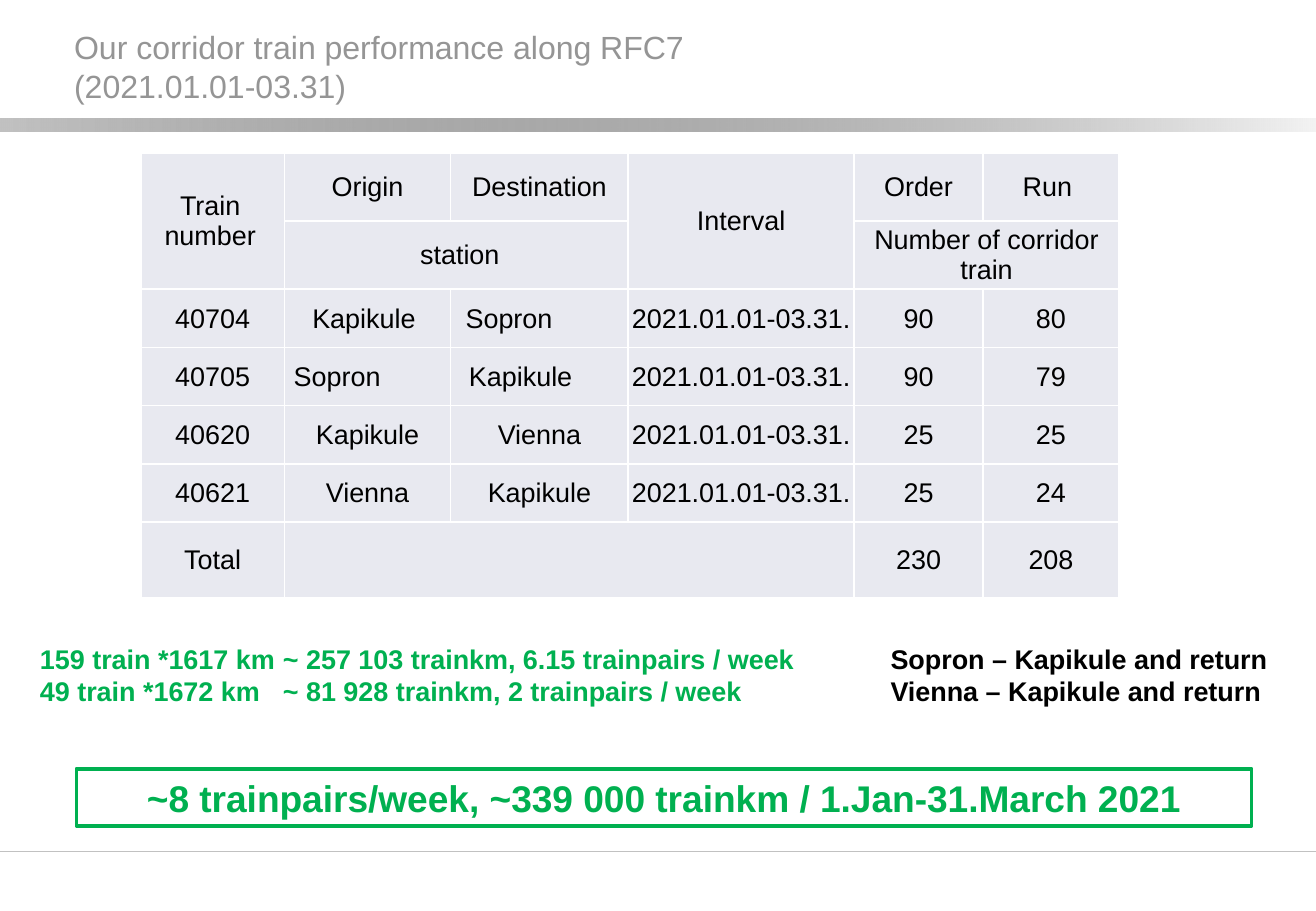
import lxml.etree
import pptx
import pptx.dml.color
import pptx.enum.shapes
import pptx.enum.text
import pptx.oxml
import pptx.oxml.ns
import pptx.util

Inches = pptx.util.Inches
Pt = pptx.util.Pt
qn = pptx.oxml.ns.qn
ALIGN = pptx.enum.text.PP_ALIGN
ANCHOR = pptx.enum.text.MSO_ANCHOR
SHAPE = pptx.enum.shapes.MSO_SHAPE

COLORS = {"black": "000000", "title": "959595", "rule": "C1C1C1",
          "cell": "E8E9F0", "white": "FFFFFF", "green": "00B050"}


class SlideBuilder:
    font = "Arial"

    def __init__(self, slide):
        self.s = slide

    def rgb(self, name):
        return pptx.dml.color.RGBColor.from_string(COLORS[name])

    def style(self, r, size, color, bold=False):
        r.font.name = self.font
        r.font.size = Pt(size)
        r.font.bold = bold
        r.font.color.rgb = self.rgb(color)

    def frame(self, tf, inset, anchor):
        tf.word_wrap = True
        tf.margin_left = tf.margin_right = Inches(inset[0])
        tf.margin_top = tf.margin_bottom = Inches(inset[1])
        tf.vertical_anchor = anchor

    def rect(self, x, y, w, h):
        sp = self.s.shapes.add_shape(SHAPE.RECTANGLE, Inches(x), Inches(y), Inches(w), Inches(h))
        sp.shadow.inherit = False
        return sp

    def gradient_bar(self, x, y, w, h):
        sp = self.rect(x, y, w, h)
        sp.line.fill.background()
        sp.fill.gradient()
        sp.fill.gradient_angle = 0
        for stop, color, position in zip(sp.fill.gradient_stops, ("rule", "black"), (0, 1)):
            stop.color.rgb = self.rgb(color)
            stop.position = position
        end = sp.element.findall(".//" + qn("a:srgbClr"))[-1]
        lxml.etree.SubElement(end, qn("a:alpha"), val="5000")

    def line(self, x1, y1, x2, y2, color, width):
        c = self.s.shapes.add_connector(pptx.enum.shapes.MSO_CONNECTOR.STRAIGHT,
                                        Inches(x1), Inches(y1), Inches(x2), Inches(y2))
        c.line.color.rgb = self.rgb(color)
        c.line.width = Pt(width)
        lxml.etree.SubElement(c.element.spPr, qn("a:effectLst"))

    def title(self, x, y, w, h, text):
        tf = self.s.shapes.add_textbox(Inches(x), Inches(y), Inches(w), Inches(h)).text_frame
        self.frame(tf, (0, 0), ANCHOR.BOTTOM)
        p = tf.paragraphs[0]
        p.text = text
        for r in p.runs:
            self.style(r, 19, "title")

    def tabbed_lines(self, x, y, w, h, lines, tabs):
        tf = self.s.shapes.add_textbox(Inches(x), Inches(y), Inches(w), Inches(h)).text_frame
        self.frame(tf, (0.1, 0.05), ANCHOR.TOP)
        for i, (figures, route) in enumerate(lines):
            p = tf.add_paragraph() if i else tf.paragraphs[0]
            tab_list = lxml.etree.SubElement(p._p.get_or_add_pPr(), qn("a:tabLst"))
            for tab in tabs:
                lxml.etree.SubElement(tab_list, qn("a:tab"), pos=str(Inches(tab)), algn="l")
            for text, color in ((figures + "\t", "green"), (route, "black")):
                r = p.add_run()
                r.text = text
                self.style(r, 16, color, True)

    def outlined_box(self, x, y, w, h, text):
        sp = self.rect(x, y, w, h)
        sp.fill.background()
        sp.line.color.rgb = self.rgb("green")
        sp.line.width = Pt(2.25)
        self.frame(sp.text_frame, (0.1, 0.05), ANCHOR.MIDDLE)
        p = sp.text_frame.paragraphs[0]
        p.text = text
        p.alignment = ALIGN.CENTER
        self.style(p.runs[0], 22, "green", True)

    def border(self, cell):
        tc_pr = cell._tc.get_or_add_tcPr()
        for side in ("L", "R", "T", "B"):
            ln = lxml.etree.SubElement(tc_pr, qn("a:ln" + side), w=str(Pt(1)))
            fill = lxml.etree.SubElement(ln, qn("a:solidFill"))
            lxml.etree.SubElement(fill, qn("a:srgbClr"), val=COLORS["white"])

    def table(self, x, y, cols, rows, data, merges, shifts):
        table = self.s.shapes.add_table(len(rows), len(cols), Inches(x), Inches(y),
                                        Inches(sum(cols)), Inches(sum(rows))).table
        table.first_row = table.horz_banding = False
        for col, width in zip(table.columns, cols):
            col.width = Inches(width)
        for row, height in zip(table.rows, rows):
            row.height = Inches(height)
        for i, values in enumerate(data):
            for j, text in enumerate(values):
                cell = table.cell(i, j)
                self.border(cell)
                cell.fill.solid()
                cell.fill.fore_color.rgb = self.rgb("cell")
                cell.vertical_anchor = ANCHOR.MIDDLE
                shift = shifts.get((i, j), 0)
                cell.margin_left = Inches(0.01 + max(-shift, 0))
                cell.margin_right = Inches(0.01 + max(shift, 0))
                cell.margin_top = Inches(0.01)
                cell.margin_bottom = 0
                if text:
                    p = cell.text_frame.paragraphs[0]
                    p.text = text
                    p.alignment = ALIGN.CENTER
                    self.style(p.runs[0], 16, "black")
        for first, last in merges:
            table.cell(*first).merge(table.cell(*last))


def main():
    prs = pptx.Presentation()
    prs.slide_width = Inches(10.83)
    prs.slide_height = Inches(7.5)
    b = SlideBuilder(prs.slides.add_slide(prs.slide_layouts[6]))

    b.gradient_bar(0, 0.98, 10.83, 0.1)
    b.line(0, 7.01, 10.83, 7.01, "rule", 1)

    interval = "2021.01.01-03.31."
    trains = [
        ("40704", "Kapikule", "Sopron", "90", "80"),
        ("40705", "Sopron", "Kapikule", "90", "79"),
        ("40620", "Kapikule", "Vienna", "25", "25"),
        ("40621", "Vienna", "Kapikule", "25", "24"),
    ]
    data = [
        ("Train number", "Origin", "Destination", "Interval", "Order", "Run"),
        ("", "station", "", "", "Number of corridor train", ""),
        *[(number, origin, destination, interval, order, run)
          for number, origin, destination, order, run in trains],
        ("Total", "", "", "", "230", "208"),
    ]
    merges = [((0, 0), (1, 0)), ((0, 3), (1, 3)), ((1, 1), (1, 2)),
              ((1, 4), (1, 5)), ((6, 1), (6, 3))]
    shifts = {(0, 0): 0.04, (0, 5): 0.06, (1, 1): -0.06, (2, 1): 0.06,
              (2, 2): 0.5, (3, 1): 0.5, (3, 2): 0.31}
    b.table(1.16, 1.26, [1.18, 1.37, 1.46, 1.86, 1.06, 1.12],
            [0.56] * 2 + [0.48] * 4 + [0.62], data, merges, shifts)

    b.title(0.61, 0.29, 6.41, 0.57,
            "Our corridor train performance along RFC7\v(2021.01.01-03.31)")
    b.tabbed_lines(0.23, 5.24, 10.48, 0.62, [
        ("159 train *1617 km\t~ 257 103 trainkm, 6.15 trainpairs / week",
         "Sopron – Kapikule and return"),
        ("49 train *1672 km\t~ 81 928 trainkm, 2 trainpairs / week",
         "Vienna – Kapikule and return"),
    ], tabs=(2, 7))
    b.outlined_box(0.63, 6.33, 9.67, 0.47,
                   "~8 trainpairs/week, ~339 000 trainkm / 1.Jan-31.March 2021")

    prs.save("out.pptx")


if __name__ == "__main__":
    main()
